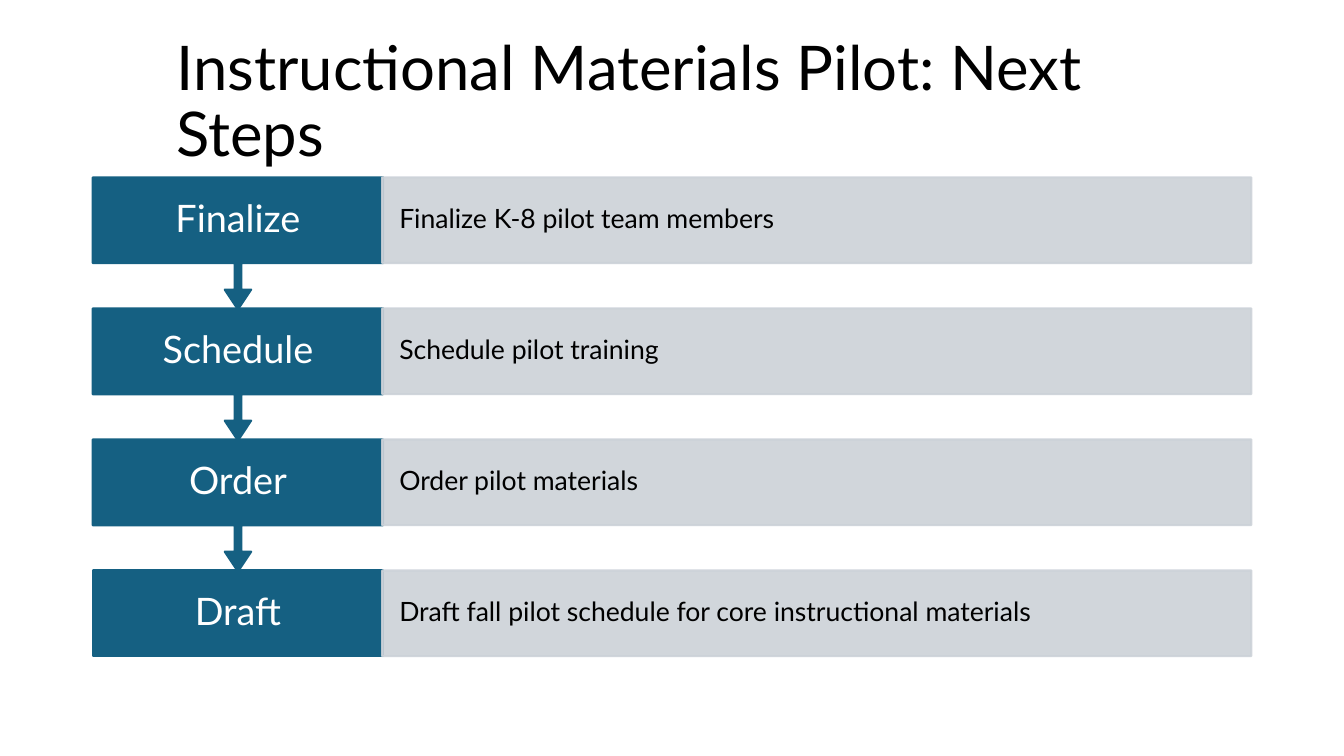
from lxml import etree
from pptx import Presentation
from pptx.dml.color import RGBColor
from pptx.enum.shapes import MSO_SHAPE
from pptx.enum.text import MSO_ANCHOR, MSO_AUTO_SIZE, PP_ALIGN
from pptx.oxml.ns import qn
from pptx.util import Inches, Pt

RECTANGLE = MSO_SHAPE.RECTANGLE
ARROW_BOX = MSO_SHAPE.DOWN_ARROW_CALLOUT
MIDDLE = MSO_ANCHOR.MIDDLE
NO_AUTOFIT = MSO_AUTO_SIZE.NONE
LEFT, CENTER = PP_ALIGN.LEFT, PP_ALIGN.CENTER

BLUE = RGBColor(0x15, 0x60, 0x82)
GRAY = RGBColor(0xCC, 0xD2, 0xD8)
WHITE = RGBColor(0xFF, 0xFF, 0xFF)
BLACK = RGBColor(0x00, 0x00, 0x00)

STEPS = [
    ("Finalize", "Finalize K-8 pilot team members"),
    ("Schedule", "Schedule pilot training\u00a0".rstrip()),
    ("Order", "Order pilot materials"),
    ("Draft", "Draft fall pilot schedule for core instructional materials"),
]
ROW_TOP, ROW_PITCH, ROW_HEIGHT = 1.76, 1.3, 0.85
STEP_LEFT, STEP_WIDTH = 0.92, 2.88
DETAIL_LEFT, DETAIL_WIDTH = 3.79, 8.62
ARROW_BOX_HEIGHT = 1.31
ARROW_ADJUSTMENTS = (0.05, 0.1, 0.15, 0.65)

STEP_FORMAT = {"size": Pt(27), "color": WHITE, "alignment": CENTER, "inset": 0.2}
DETAIL_FORMAT = {"size": Pt(19), "color": BLACK, "alignment": LEFT, "inset": 0.17}
TITLE_FORMAT = {"size": Pt(44), "color": BLACK, "alignment": LEFT, "inset": 0.1}


def write_text(shape, text, style):
    frame = shape.text_frame
    frame.text = text
    inset = Inches(style["inset"])
    frame_format = {
        "word_wrap": True,
        "auto_size": NO_AUTOFIT,
        "vertical_anchor": MIDDLE,
        "margin_left": inset,
        "margin_right": inset,
        "margin_top": Inches(0.05),
        "margin_bottom": Inches(0.05),
    }
    for name, value in frame_format.items():
        setattr(frame, name, value)
    paragraph = frame.paragraphs[0]
    paragraph.alignment = style["alignment"]
    paragraph.line_spacing = 0.9
    font = paragraph.runs[0].font
    font.name = "Lato"
    font.size = style["size"]
    font.color.rgb = style["color"]


def add_box(slide, kind, bounds, color):
    shape = slide.shapes.add_shape(kind, *map(Inches, bounds))
    shape.shadow.inherit = False
    shape.fill.solid()
    shape.fill.fore_color.rgb = color
    shape.line.color.rgb = color
    shape.line.width = Pt(1.5)
    return shape


def set_opacity(shape, percent):
    """Apply one opacity to both the fill and the outline."""
    for color in shape.fill._xPr.iter(qn("a:srgbClr")):
        etree.SubElement(color, qn("a:alpha"), val=str(percent * 1000))


def add_title(slide, text):
    title = slide.shapes.title
    bounds = {"left": 1.65, "top": 0.29, "width": 10.04, "height": 1.47}
    for name, value in bounds.items():
        setattr(title, name, Inches(value))
    write_text(title, text, TITLE_FORMAT)


def add_step(slide, index, name, detail):
    """Add one row; every step but the last points down to the next."""
    top = ROW_TOP + index * ROW_PITCH
    is_last = index == len(STEPS) - 1
    kind, height = (RECTANGLE, ROW_HEIGHT) if is_last else (ARROW_BOX, ARROW_BOX_HEIGHT)
    step = add_box(slide, kind, (STEP_LEFT, top, STEP_WIDTH, height), BLUE)
    if not is_last:
        for position, value in enumerate(ARROW_ADJUSTMENTS):
            step.adjustments[position] = value
    write_text(step, name, STEP_FORMAT)

    bar = add_box(slide, RECTANGLE, (DETAIL_LEFT, top, DETAIL_WIDTH, ROW_HEIGHT), GRAY)
    set_opacity(bar, 90)
    write_text(bar, detail, DETAIL_FORMAT)


def main():
    presentation = Presentation()
    presentation.slide_width = Inches(13.33)
    presentation.slide_height = Inches(7.5)
    slide = presentation.slides.add_slide(presentation.slide_layouts[5])
    add_title(slide, "Instructional Materials Pilot: Next Steps")
    for index, (name, detail) in reversed(list(enumerate(STEPS))):
        add_step(slide, index, name, detail)
    presentation.save("out.pptx")


if __name__ == "__main__":
    main()
